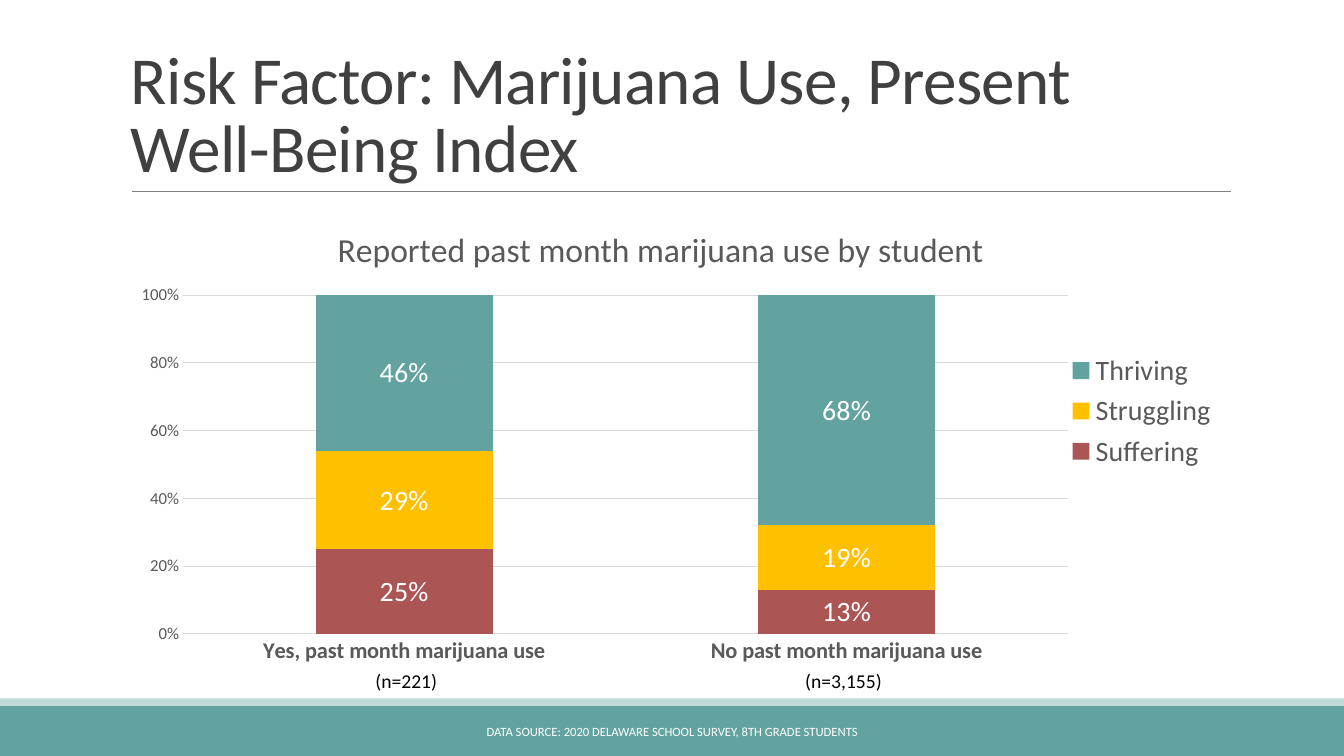
from lxml.etree import SubElement
from pptx import Presentation
from pptx.chart.data import CategoryChartData
from pptx.dml.color import RGBColor
from pptx.enum.chart import XL_CHART_TYPE, XL_LEGEND_POSITION, XL_TICK_MARK
from pptx.enum.shapes import MSO_CONNECTOR, MSO_SHAPE
from pptx.enum.text import MSO_ANCHOR, PP_ALIGN
from pptx.oxml.ns import qn
from pptx.util import Cm, Pt

FONT = "Calibri"
TEAL, PALE_TEAL, GOLD, RED = "62A39F", "C0DAD8", "FFC000", "AB5555"
WHITE, BLACK, GREY, LIGHT_GREY = "FFFFFF", "000000", "595959", "D9D9D9"


def style(font, size, color, bold=False):
    font.name, font.size, font.bold = FONT, Pt(size), bold
    font.color.rgb = RGBColor.from_string(color)


def set_layout(element, index, **fractions):
    """Place a chart part at fractions of the chart's width and height."""
    for old_layout in element.findall(qn("c:layout")):
        element.remove(old_layout)
    layout = element.makeelement(qn("c:layout"))
    element.insert(index, layout)
    manual = SubElement(layout, qn("c:manualLayout"))
    if "w" in fractions:
        SubElement(manual, qn("c:layoutTarget")).set("val", "inner")
    for mode in ("xMode", "yMode"):
        SubElement(manual, qn(f"c:{mode}")).set("val", "edge")
    for name, value in fractions.items():
        SubElement(manual, qn(f"c:{name}")).set("val", str(value))


presentation = Presentation()
presentation.slide_width, presentation.slide_height = Cm(33.87), Cm(19.05)
slide = presentation.slides.add_slide(presentation.slide_layouts[6])

# Footer bands
for top, height, color in ((17.78, 1.27, TEAL), (17.6, 0.18, PALE_TEAL)):
    band = slide.shapes.add_shape(
        MSO_SHAPE.RECTANGLE, 0, Cm(top), presentation.slide_width, Cm(height))
    band.shadow.inherit = False
    band.fill.solid()
    band.fill.fore_color.rgb = RGBColor.from_string(color)
    band.line.fill.background()

# Rule under the title
rule = slide.shapes.add_connector(
    MSO_CONNECTOR.STRAIGHT, Cm(3.33), Cm(4.83), Cm(31.01), Cm(4.83))
rule.line.color.rgb = RGBColor.from_string("808080")
rule.line.width = Pt(0.5)
SubElement(rule.element.spPr, qn("a:effectLst"))

# Stacked chart
chart_data = CategoryChartData(number_format="0%")
chart_data.categories = ["Yes, past month marijuana use", "No past month marijuana use"]
chart_data.add_series("Suffering", (0.25, 0.13))
chart_data.add_series("Struggling", (0.29, 0.19))
chart_data.add_series("Thriving", (0.46, 0.68))
chart = slide.shapes.add_chart(
    XL_CHART_TYPE.COLUMN_STACKED_100, Cm(3.05), Cm(4.83), Cm(27.94), Cm(12.29),
    chart_data).chart
style(chart.font, 10, BLACK)

plot = chart.plots[0]
plot.gap_width, plot.overlap, plot.vary_by_categories = 150, 100, False
for series, color in zip(plot.series, (RED, GOLD, TEAL)):
    series.format.fill.solid()
    series.format.fill.fore_color.rgb = RGBColor.from_string(color)
    labels = series.data_labels
    labels.show_value = True
    labels.number_format, labels.number_format_is_linked = "0%", False
    style(labels.font, 20, WHITE)

# Axes
category_axis, value_axis = chart.category_axis, chart.value_axis
for axis in (category_axis, value_axis):
    axis.major_tick_mark = axis.minor_tick_mark = XL_TICK_MARK.NONE
style(category_axis.tick_labels.font, 16, GREY, bold=True)
style(value_axis.tick_labels.font, 12, GREY)
value_axis.tick_labels.number_format = "0%"
value_axis.tick_labels.number_format_is_linked = False
value_axis.minimum_scale, value_axis.maximum_scale = 0, 1
value_axis.major_unit = 0.2
value_axis.format.line.fill.background()
for line in (category_axis.format.line, value_axis.major_gridlines.format.line):
    line.color.rgb = RGBColor.from_string(LIGHT_GREY)
    line.width = Pt(0.75)

# Chart title and legend
chart.has_title = True
run = chart.chart_title.text_frame.paragraphs[0].add_run()
run.text = "Reported past month marijuana use by student"
style(run.font, 24, GREY)
chart.has_legend = True
chart.legend.position = XL_LEGEND_POSITION.RIGHT
chart.legend.include_in_layout = False
style(chart.legend.font, 20, GREY)

set_layout(chart.element.xpath("c:chart/c:plotArea")[0], 0, x=0.056, y=0.212, w=0.798, h=0.695)
set_layout(chart.element.xpath("c:chart/c:title")[0], 1, x=0.19, y=0.06)
set_layout(chart.element.xpath("c:chart/c:legend")[0], 1, x=0.85, y=0.32)

# Slide title, source line and sample sizes
for text, box, size, color, anchor, align in (
    ("Risk Factor: Marijuana Use, Present Well-Being Index",
     (3.05, 0.79, 27.94, 4.04), 48, "404040", MSO_ANCHOR.BOTTOM, PP_ALIGN.LEFT),
    ("DATA SOURCE: 2020 DELAWARE SCHOOL SURVEY, 8TH GRADE STUDENTS",
     (10.24, 17.93, 13.39, 1.02), 9, WHITE, MSO_ANCHOR.MIDDLE, PP_ALIGN.CENTER),
    ("(n=3,155)", (19.94, 16.74, 2.64, 0.86), 14, BLACK, MSO_ANCHOR.TOP, PP_ALIGN.CENTER),
    ("(n=221)", (8.92, 16.74, 2.64, 0.86), 14, BLACK, MSO_ANCHOR.TOP, PP_ALIGN.CENTER),
):
    frame = slide.shapes.add_textbox(*map(Cm, box)).text_frame
    frame.word_wrap = True
    frame.vertical_anchor = anchor
    paragraph = frame.paragraphs[0]
    paragraph.alignment = align
    run = paragraph.add_run()
    run.text = text
    style(run.font, size, color)
    if size == 48:
        paragraph.line_spacing = 0.85
        run.font._element.set("spc", "-50")

presentation.save("out.pptx")
